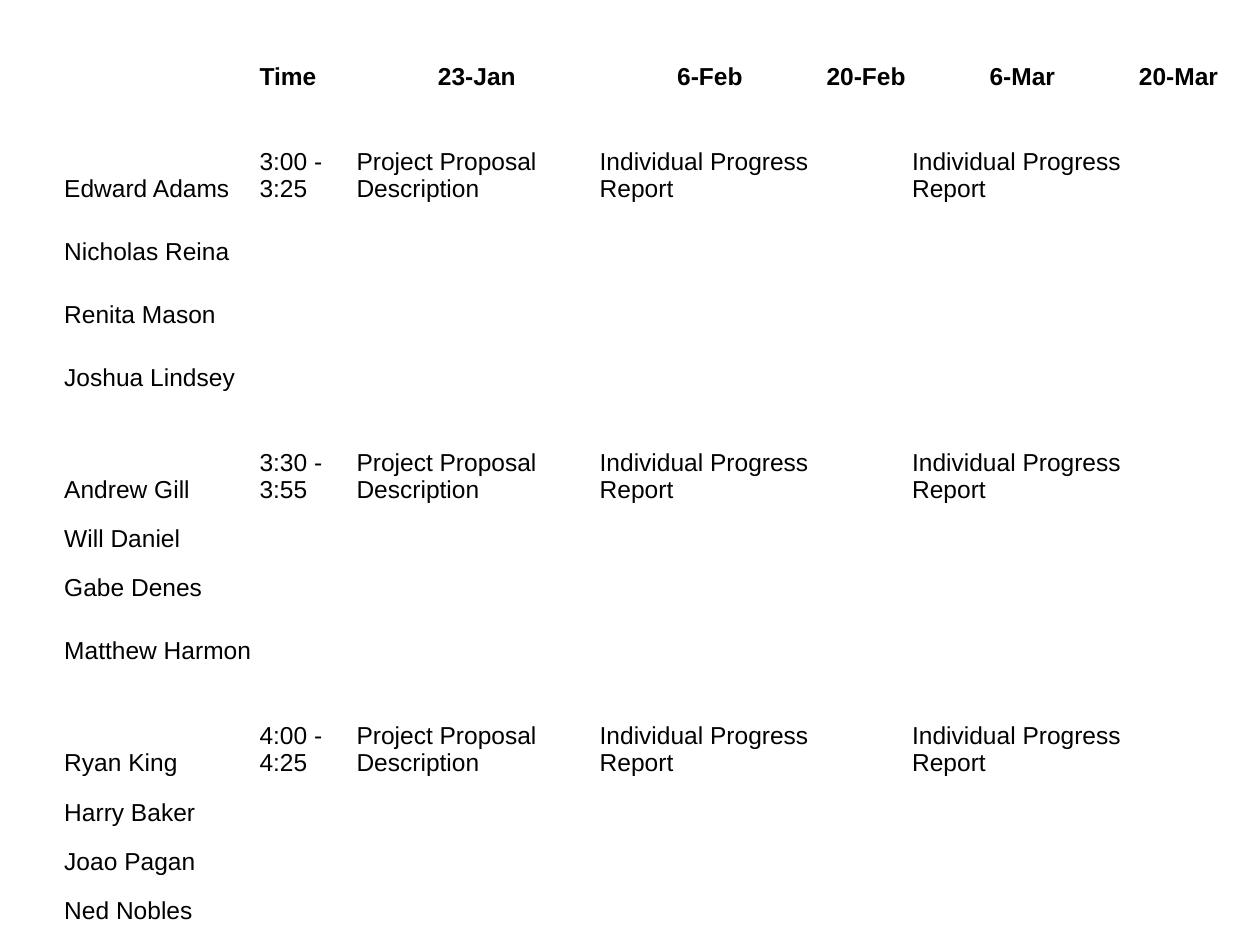
from dataclasses import dataclass

from pptx import Presentation
from pptx.dml.color import RGBColor
from pptx.enum.text import MSO_ANCHOR as Anchor, PP_ALIGN as Align
from pptx.util import Emu, Pt

EMU_PER_PX = 9144  # 100 px to the inch
COLORS = {"text": "000000"}
FONT_FORMAT = {"name": "Arial", "size": Pt(14)}
CELL_FORMAT = {
    "margin_left": Emu(EMU_PER_PX),
    "margin_right": Emu(EMU_PER_PX),
    "margin_top": Emu(EMU_PER_PX),
    "margin_bottom": Emu(0),
    "vertical_anchor": Anchor.BOTTOM,
}
TABLE_FORMAT = {"first_row": False, "horz_banding": False}

LEFT, TOP = 50, 33
COLUMN_WIDTHS = [155, 77, 193, 177, 71, 177, 71]
SHORT_ROW, TALL_ROW = 39, 50
HEADINGS = ["", "Time", "23-Jan", "6-Feb", "20-Feb", "6-Mar", "20-Mar"]
TASKS = ["Project Proposal Description", "Individual Progress Report", "",
         "Individual Progress Report", ""]


@dataclass
class Team:
    time: str
    members: list[str]
    tall_members: list[str]


@dataclass
class Row:
    height: int
    texts: list[str]
    heading: bool = False


TEAMS = [
    Team("3:00 - 3:25",
         ["Edward Adams", "Nicholas Reina", "Renita Mason", "Joshua Lindsey"],
         ["Edward Adams", "Nicholas Reina", "Renita Mason", "Joshua Lindsey"]),
    Team("3:30 - 3:55",
         ["Andrew Gill", "Will Daniel", "Gabe Denes", "Matthew Harmon"],
         ["Andrew Gill", "Matthew Harmon"]),
    Team("4:00 - 4:25",
         ["Ryan King", "Harry Baker", "Joao Pagan", "Ned Nobles"],
         ["Ryan King"]),
]


def px(length: int) -> Emu:
    return Emu(length * EMU_PER_PX)


def apply_format(target, values: dict) -> None:
    for name, value in values.items():
        setattr(target, name, value)


def schedule_rows() -> list[Row]:
    """Headings, then each team after a blank row; its first member has the tasks."""
    blank = [""] * len(HEADINGS)
    rows = [Row(SHORT_ROW, HEADINGS, heading=True)]
    for team in TEAMS:
        rows.append(Row(SHORT_ROW, blank))
        for index, member in enumerate(team.members):
            height = TALL_ROW if member in team.tall_members else SHORT_ROW
            details = [team.time, *TASKS] if index == 0 else blank[1:]
            rows.append(Row(height, [member, *details]))
    return rows


def fill_cell(cell, text: str, bold: bool, centered: bool) -> None:
    apply_format(cell, CELL_FORMAT)
    cell.fill.background()
    if not text:
        return
    paragraph = cell.text_frame.paragraphs[0]
    paragraph.alignment = Align.CENTER if centered else Align.LEFT
    run = paragraph.add_run()
    run.text = text
    apply_format(run.font, {**FONT_FORMAT, "bold": bold})
    run.font.color.rgb = RGBColor.from_string(COLORS["text"])


def add_schedule(slide, rows: list[Row]) -> None:
    width, height = sum(COLUMN_WIDTHS), sum(row.height for row in rows)
    table = slide.shapes.add_table(len(rows), len(COLUMN_WIDTHS), px(LEFT), px(TOP),
                                   px(width), px(height)).table
    apply_format(table, TABLE_FORMAT)
    for column, column_width in zip(table.columns, COLUMN_WIDTHS):
        column.width = px(column_width)
    for row_index, row in enumerate(rows):
        table.rows[row_index].height = px(row.height)
        for column_index, text in enumerate(row.texts):
            # Dates are centred; the time heading stays left
            fill_cell(table.cell(row_index, column_index), text, row.heading,
                      row.heading and column_index > 1)


def main() -> None:
    presentation = Presentation()
    apply_format(presentation, {"slide_width": px(1000), "slide_height": px(750)})
    slide = presentation.slides.add_slide(presentation.slide_layouts[6])
    # Schedule of team meetings
    add_schedule(slide, schedule_rows())
    presentation.save("out.pptx")


if __name__ == "__main__":
    main()
